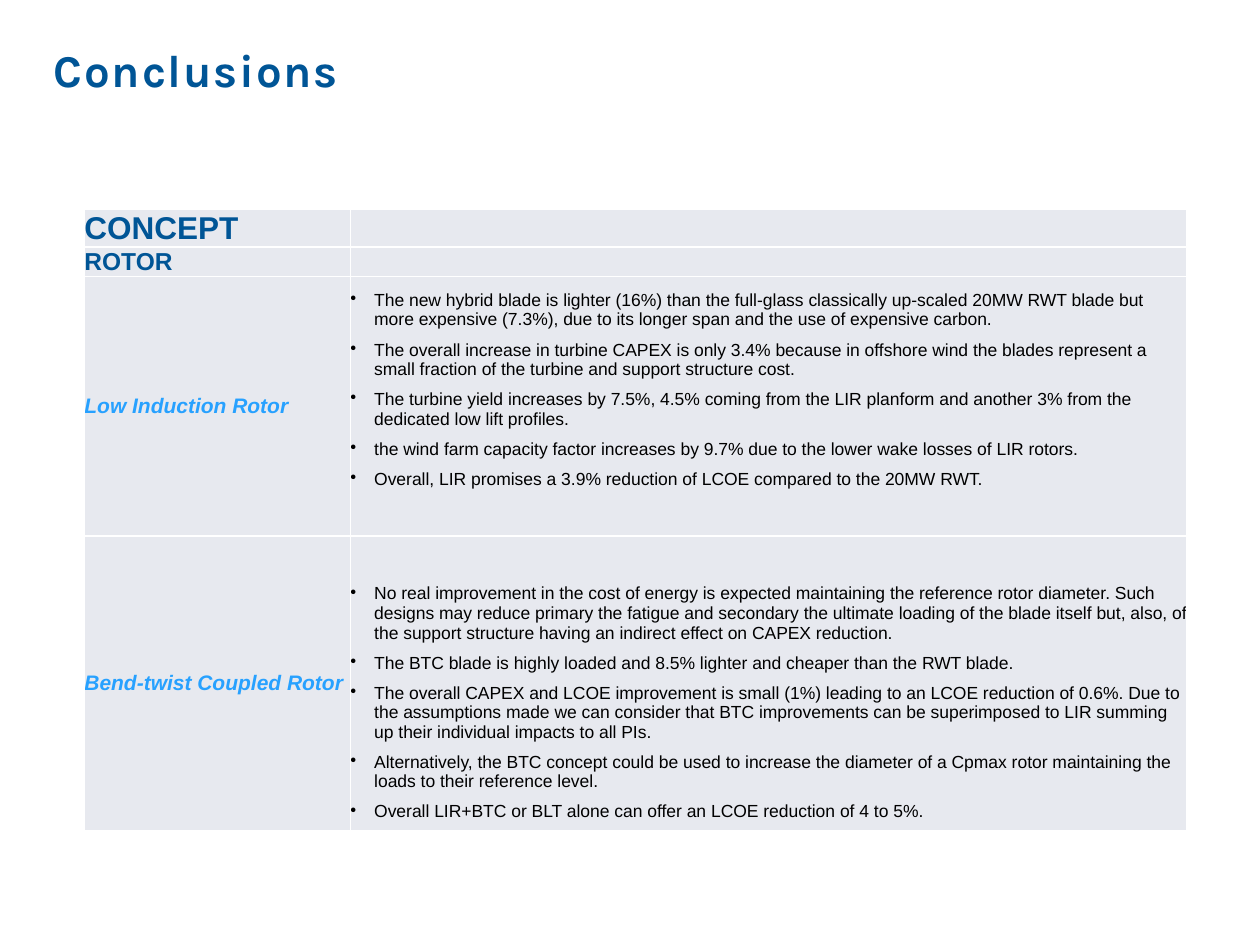
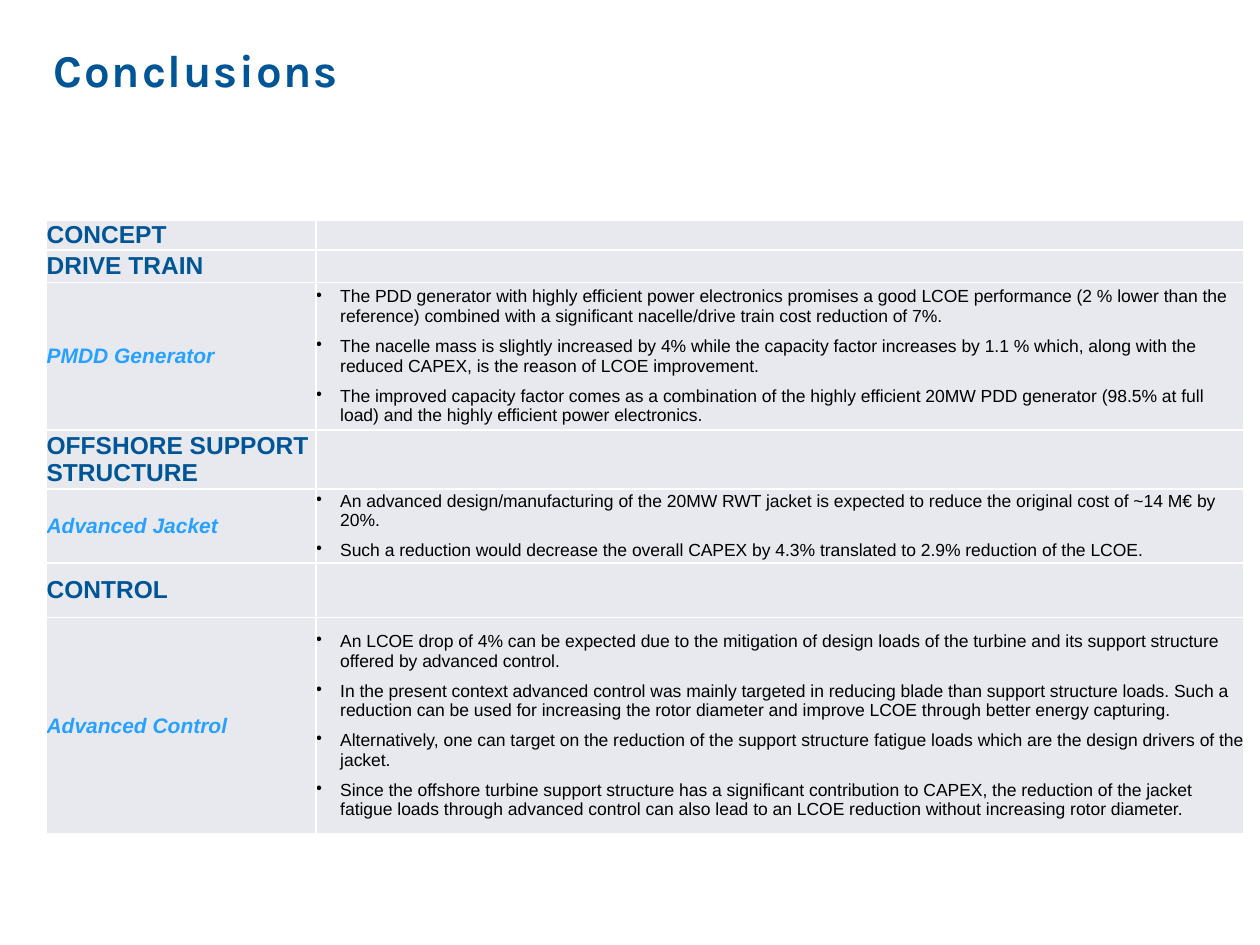
from lxml.etree import SubElement, fromstring
from pptx import Presentation
from pptx.dml.color import RGBColor
from pptx.enum.text import MSO_ANCHOR
from pptx.oxml.ns import qn
from pptx.util import Inches, Pt

# Content: each row is (kind, label, bullets)
ROTOR = [
    ("top", "CONCEPT", []),
    ("head", "ROTOR", []),
    ("item", "Low Induction Rotor", [
        "The new hybrid blade is lighter (16%) than the full-glass classically up-scaled 20MW RWT blade but more expensive (7.3%), due to its longer span and the use of expensive carbon.",
        "The overall increase in turbine CAPEX is only 3.4% because in offshore wind the blades represent a small fraction of the turbine and support structure cost.",
        "The turbine yield increases by 7.5%, 4.5% coming from the LIR planform and another 3% from the dedicated low lift profiles.",
        "the wind farm capacity factor increases by 9.7% due to the lower wake losses of LIR rotors.",
        "Overall, LIR promises a 3.9% reduction of LCOE compared to the 20MW RWT.",
    ]),
    ("item", "Bend-twist Coupled Rotor", [
        "No real improvement in the cost of energy is expected maintaining the reference rotor diameter. Such designs may reduce primary the fatigue and secondary the ultimate loading of the blade itself but, also, of the support structure having an indirect effect on CAPEX reduction.",
        "The BTC blade is highly loaded and 8.5% lighter and cheaper than the RWT blade.",
        "The overall CAPEX and LCOE improvement is small (1%) leading to an LCOE reduction of 0.6%. Due to the assumptions made we can consider that BTC improvements can be superimposed to LIR summing up their individual impacts to all PIs.",
        "Alternatively, the BTC concept could be used to increase the diameter of a Cpmax rotor maintaining the loads to their reference level.",
        "Overall LIR+BTC or BLT alone can offer an LCOE reduction of 4 to 5%.",
    ]),
]
SYSTEM = [
    ("head", "CONCEPT", []),
    ("head", "DRIVE TRAIN", []),
    ("item", "PMDD Generator", [
        "The PDD generator with highly efficient power electronics promises a good LCOE performance (2 % lower than the reference) combined with a significant nacelle/drive train cost reduction of 7%.",
        "The nacelle mass is slightly increased by 4% while the capacity factor increases by 1.1 % which, along with the reduced CAPEX, is the reason of LCOE improvement.",
        "The improved capacity factor comes as a combination of the highly efficient 20MW PDD generator (98.5% at full load) and the highly efficient power electronics.",
    ]),
    ("head", "OFFSHORE SUPPORT STRUCTURE", []),
    ("item", "Advanced Jacket", [
        "An advanced design/manufacturing of the 20MW RWT jacket is expected to reduce the original cost of ~14 M€ by 20%.",
        "Such a reduction would decrease the overall CAPEX by 4.3% translated to 2.9% reduction of the LCOE.",
    ]),
    ("head", "CONTROL", []),
    ("item", "Advanced Control", [
        "An LCOE drop of 4% can be expected due to the mitigation of design loads of the turbine and its support structure offered by advanced control.",
        "In the present context advanced control was mainly targeted in reducing blade than support structure loads. Such a reduction can be used for increasing the rotor diameter and improve LCOE through better energy capturing.",
        "Alternatively, one can target on the reduction of the support structure fatigue loads which are the design drivers of the jacket.",
        "Since the offshore turbine support structure has a significant contribution to CAPEX, the reduction of the jacket fatigue loads through advanced control can also lead to an LCOE reduction without increasing rotor diameter.",
    ]),
]
# pads: row number -> (top, bottom) margin of its bullet cell
SLIDES = [
    dict(title="Conclusions", rows=ROTOR, at=(0.67, 1.66), cols=(2.11, 6.64),
         highs=(0.29, 0.23, 2.06, 2.34), pads={2: (0, 0.26), 3: (0.31, 0)}),
    dict(title="Conclusions", rows=SYSTEM, at=(0.37, 1.75), cols=(2.14, 7.36),
         highs=(0.23, 0.26, 1.13, 0.44, 0.59, 0.43, 1.72), pads={}),
]

# Shared look
COLORS = dict(navy="005596", sky="27A1FF", text="000000", cell="E7E9EF", line="FFFFFF")
STYLES = {  # size, colour, bold, italic
    "top": (18, "navy", True, False),
    "head": (14, "navy", True, False),
    "item": (12, "sky", True, True),
    "body": (10, "text", False, False),
    "title": (26, "navy", True, False),
}
INDENT = Inches(0.19)
NS = "http://schemas.openxmlformats.org/drawingml/2006/main"


def color(name):
    return RGBColor.from_string(COLORS[name])


def style(para, kind, face="Arial"):
    size, hue, bold, slant = STYLES[kind]
    for run in para.runs:
        font = run.font
        font.name, font.size = face, Pt(size)
        font.bold, font.italic = bold, slant
        font.color.rgb = color(hue)


def bullet(para):
    props = para._p.get_or_add_pPr()
    props.set("marL", str(INDENT))
    props.set("indent", str(-INDENT))
    SubElement(props, qn("a:buChar")).set("char", "•")
    para.space_after = Pt(6)


def border(cell):
    props = cell._tc.get_or_add_tcPr()
    for place, side in enumerate("LRTB"):
        props.insert(place, fromstring(
            f'<a:ln{side} xmlns:a="{NS}" w="{Pt(1)}"><a:solidFill>'
            f'<a:srgbClr val="{COLORS["line"]}"/></a:solidFill></a:ln{side}>'))


def fill_cell(cell, lines, kind, pad=(0, 0)):
    cell.margin_left = cell.margin_right = 0
    cell.margin_top, cell.margin_bottom = map(Inches, pad)
    cell.vertical_anchor = MSO_ANCHOR.MIDDLE
    cell.fill.solid()
    cell.fill.fore_color.rgb = color("cell")
    border(cell)
    frame = cell.text_frame
    frame.text = "\n".join(lines)
    for para in frame.paragraphs:
        if not lines:  # keeps an empty cell from stretching its row
            SubElement(para._p, qn("a:endParaRPr")).set("sz", "1000")
        elif kind == "body":
            bullet(para)
        style(para, kind)


def add_title(slide, text):
    box = slide.shapes.add_textbox(Inches(0.33), Inches(0.25), Inches(8.75), Inches(0.65))
    frame = box.text_frame
    frame.word_wrap = True
    frame.vertical_anchor = MSO_ANCHOR.MIDDLE
    frame.text = text
    para = frame.paragraphs[0]
    para.line_spacing = 0.9
    style(para, "title", "Karla")
    para.runs[0].font._element.set("spc", "100")


def add_grid(slide, rows, at, cols, highs, pads):
    sizes = (*at, sum(cols), sum(highs))
    grid = slide.shapes.add_table(len(rows), len(cols), *map(Inches, sizes)).table
    grid.first_row = grid.horz_banding = False
    for col, wide in zip(grid.columns, cols):
        col.width = Inches(wide)
    for num, (kind, label, points) in enumerate(rows):
        grid.rows[num].height = Inches(highs[num])
        fill_cell(grid.cell(num, 0), [label], kind)
        fill_cell(grid.cell(num, 1), points, "body", pads.get(num, (0, 0)))


def main():
    deck = Presentation()
    deck.slide_width, deck.slide_height = Inches(10), Inches(7.5)
    for page in SLIDES:
        slide = deck.slides.add_slide(deck.slide_layouts[6])
        add_title(slide, page["title"])
        add_grid(slide, page["rows"], page["at"], page["cols"], page["highs"], page["pads"])
    deck.save("out.pptx")


if __name__ == "__main__":
    main()
